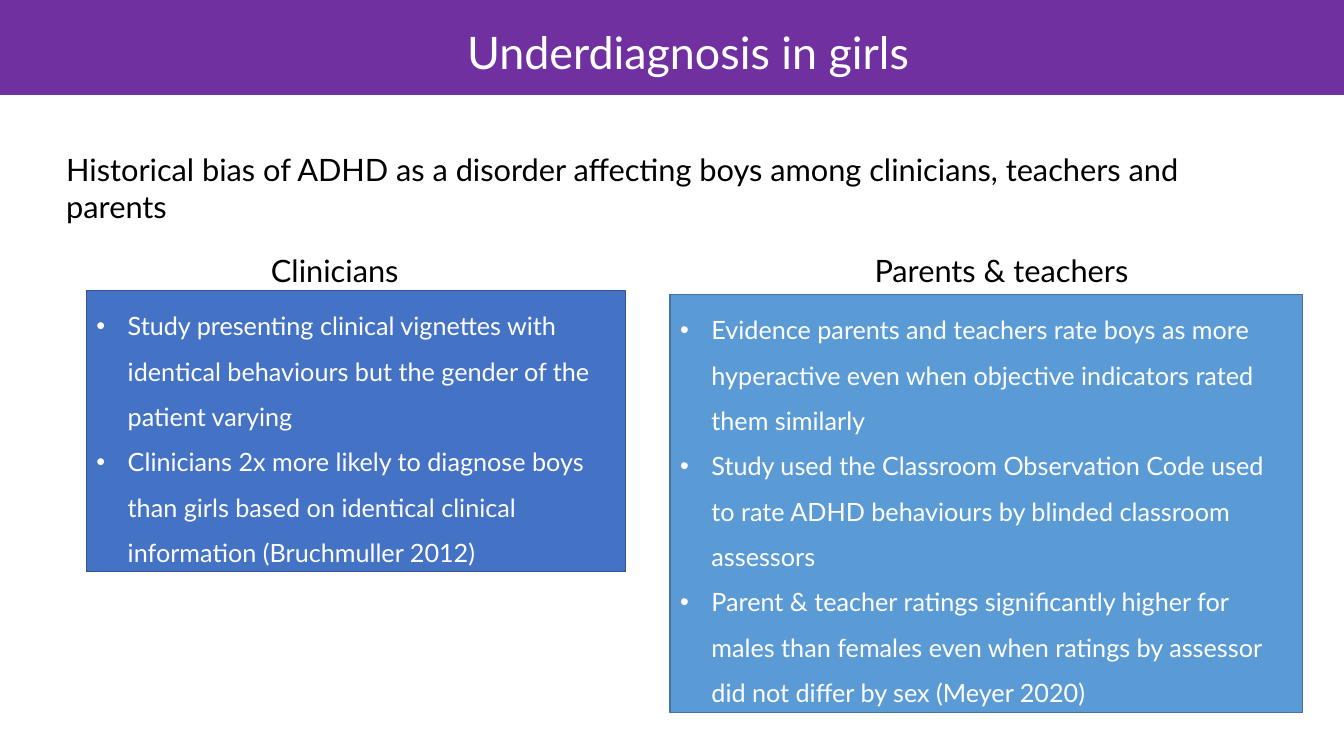
import pptx
import pptx.util
import pptx.dml.color
import pptx.enum.shapes
import pptx.enum.text
from lxml import etree

Cm = pptx.util.Cm
Pt = pptx.util.Pt
FONT = "Lato"
COLOURS = {
    "band": "7030A0",
    "clinicians": "4472C4",
    "clinicians_edge": "325491",
    "parents": "5B9BD5",
    "parents_edge": "43739E",
    "dark": "000000",
    "light": "FFFFFF",
}
CLINICIAN_POINTS = [
    "Study presenting clinical vignettes with identical behaviours but the gender of the patient varying",
    "Clinicians 2x more likely to diagnose boys than girls based on identical clinical information (Bruchmuller 2012)",
]
PARENT_POINTS = [
    "Evidence parents and teachers rate boys as more hyperactive even when objective indicators rated them similarly",
    "Study used the Classroom Observation Code used to rate ADHD behaviours by blinded classroom assessors",
    "Parent & teacher ratings significantly higher for males than females even when ratings by assessor "
    "did not differ by sex (Meyer 2020)",
]


def rgb(name):
    return pptx.dml.color.RGBColor.from_string(COLOURS[name])


def format_runs(paragraph, size, colour):
    for run in paragraph.runs:
        run.font.name = FONT
        run.font.size = Pt(size)
        run.font.color.rgb = rgb(colour)


def add_label(slide, box, words, size, colour="dark"):
    label = slide.shapes.add_textbox(*map(Cm, box))
    label.text_frame.word_wrap = True
    label.text_frame.text = words
    format_runs(label.text_frame.paragraphs[0], size, colour)
    return label.text_frame


def add_panel(slide, box, fill, edge=None):
    panel = slide.shapes.add_shape(pptx.enum.shapes.MSO_SHAPE.RECTANGLE, *map(Cm, box))
    panel.shadow.inherit = False
    panel.fill.solid()
    panel.fill.fore_color.rgb = rgb(fill)
    if edge:
        panel.line.color.rgb = rgb(edge)
        panel.line.width = Pt(1)
    else:
        panel.line.fill.background()
    return panel.text_frame


def add_bullet(paragraph):
    properties = paragraph._p.get_or_add_pPr()
    properties.set("marL", str(Cm(0.79)))
    properties.set("indent", str(-Cm(0.79)))
    for tag, key, value in (("buFont", "typeface", "Arial"), ("buChar", "char", "•")):
        etree.SubElement(properties, pptx.oxml.ns.qn("a:" + tag)).set(key, value)


def add_bullet_panel(slide, box, fill, points):
    frame = add_panel(slide, box, fill, fill + "_edge")
    frame.word_wrap = True
    frame.vertical_anchor = pptx.enum.text.MSO_ANCHOR.TOP
    frame.auto_size = pptx.enum.text.MSO_AUTO_SIZE.SHAPE_TO_FIT_TEXT
    frame.text = "\n".join(points)
    for point in frame.paragraphs:
        add_bullet(point)
        point.alignment = pptx.enum.text.PP_ALIGN.LEFT
        point.line_spacing = 1.5
        format_runs(point, 18, "light")


def main():
    deck = pptx.Presentation()
    deck.slide_width, deck.slide_height = Cm(33.87), Cm(19.05)
    slide = deck.slides.add_slide(deck.slide_layouts[6])

    # Opening statement
    statement = add_label(
        slide, (1.42, 3.68, 31.04, 12.62),
        "Historical bias of ADHD as a disorder affecting boys among clinicians, teachers and parents", 22)
    statement.paragraphs[0].space_after = Pt(6)

    # Findings for each group
    add_bullet_panel(slide, (2.18, 7.32, 13.59, 7.09), "clinicians", CLINICIAN_POINTS)
    add_bullet_panel(slide, (16.89, 7.42, 15.93, 10.54), "parents", PARENT_POINTS)
    for left, group in ((6.58, "Clinicians"), (21.79, "Parents & teachers")):
        add_label(slide, (left, 6.22, 12.65, 1.19), group, 22)

    # Title band
    add_panel(slide, (0, 0, 33.87, 2.39), "band")
    title = add_label(slide, (2.74, -0.46, 29.21, 3.68), "Underdiagnosis in girls", 32, "light")
    title.vertical_anchor = pptx.enum.text.MSO_ANCHOR.MIDDLE
    title.paragraphs[0].alignment = pptx.enum.text.PP_ALIGN.CENTER
    title.paragraphs[0].line_spacing = 0.9

    deck.save("out.pptx")


if __name__ == "__main__":
    main()
